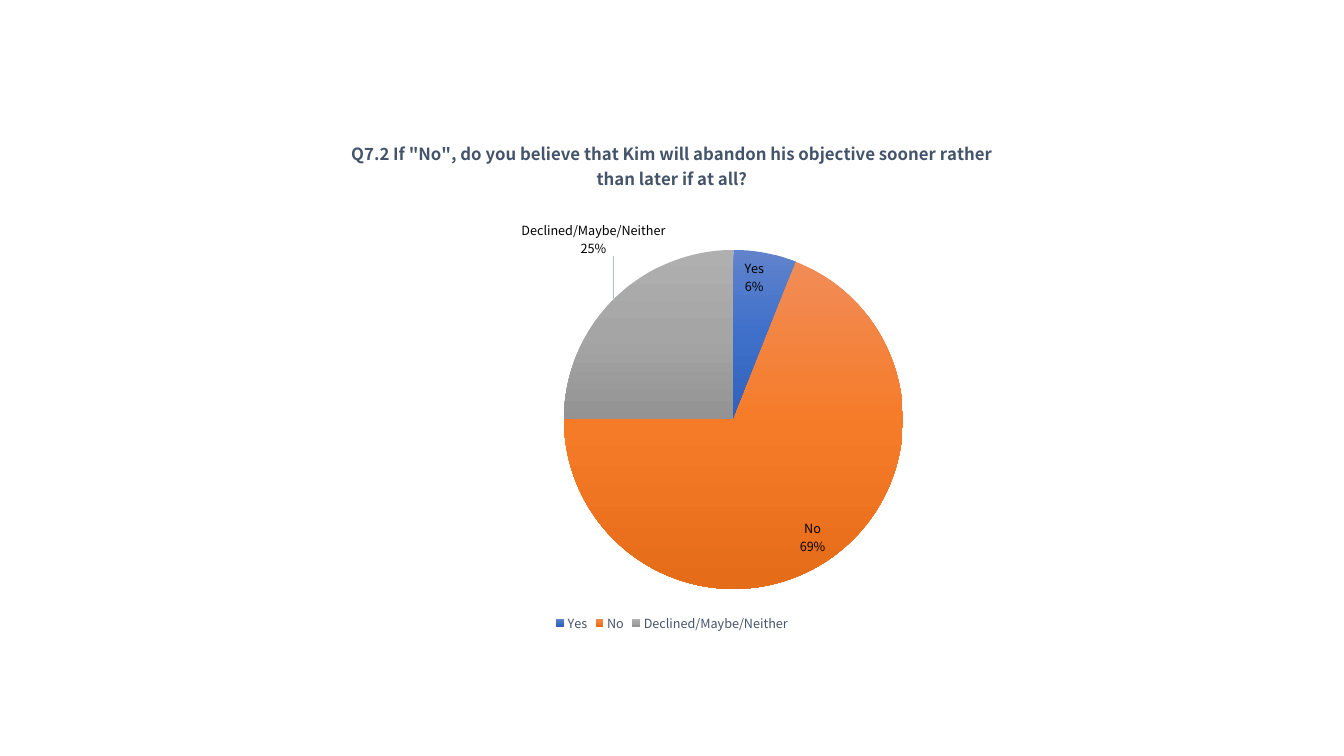
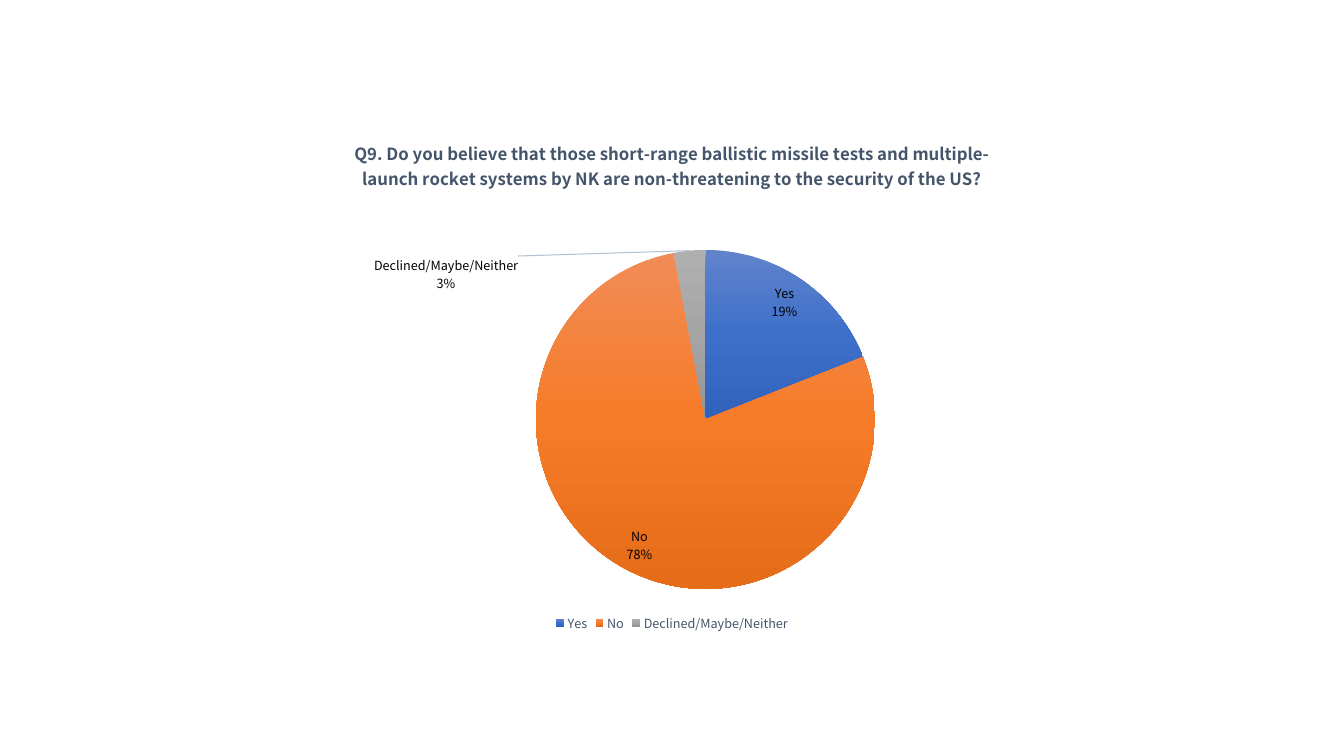
from pptx import Presentation
from pptx.chart.data import CategoryChartData
from pptx.dml.color import RGBColor
from pptx.enum.chart import XL_CHART_TYPE as ChartType
from pptx.enum.chart import XL_LABEL_POSITION as LabelPosition
from pptx.enum.chart import XL_LEGEND_POSITION as LegendPosition
from pptx.oxml import parse_xml
from pptx.oxml.ns import nsdecls, qn
from pptx.util import Pt
from copy import deepcopy

EMU_PER_PX = 914400 / 100.8
FONT = "Noto Sans CJK KR"
SLATE, BLACK, LEADER = "44546A", "000000", "B3C1D0"
ANSWERS = ["Yes", "No", "Declined/Maybe/Neither"]
GRADIENTS = [
    ("6183CB", "3E70CA", "3062BB"),
    ("F18C57", "F67B28", "E56C19"),
    ("AFAFAF", "A5A5A5", "939393"),
]
CHART_LEFT, CHART_TOP, CHART_WIDTH, CHART_HEIGHT = 255, 120, 834, 516
PIE_TOP, PIE_SIZE = 250, 339

# question, shares in percent, left edge of the pie, shift of the last label
SURVEY = [
    ('Q7.2 If "No", do you believe that Kim will abandon his objective '
     "sooner rather than later if at all?", (6, 69, 25), 564, (56, -39)),
    ("Q9. Do you believe that those short-range ballistic missile tests and "
     "multiple-launch rocket systems by NK are non-threatening to the security "
     "of the US?", (19, 78, 3), 536, (-171, 47)),
]


def px(length):
    return round(length * EMU_PER_PX)


def rgb(color):
    return RGBColor.from_string(color)


def style_font(font, size, color, bold=False):
    font.name, font.size, font.bold = FONT, Pt(size), bold
    font.color.rgb = rgb(color)


def manual_layout(x, y, size=None):
    """Layout in chart fractions; with a size it places the inner plot area."""
    parts = [("x", x / CHART_WIDTH), ("y", y / CHART_HEIGHT)]
    modes = ""
    if size:
        modes = ('<c:layoutTarget val="inner"/><c:xMode val="edge"/>'
                 '<c:yMode val="edge"/>')
        parts += [("w", size / CHART_WIDTH), ("h", size / CHART_HEIGHT)]
    values = "".join(f'<c:{tag} val="{part:.4f}"/>' for tag, part in parts)
    return parse_xml(f'<c:layout {nsdecls("c")}><c:manualLayout>{modes}{values}'
                     "</c:manualLayout></c:layout>")


def place_pie(chart, left):
    plot_area = chart._chartSpace.chart.plotArea
    for layout in plot_area.findall(qn("c:layout")):
        plot_area.remove(layout)
    plot_area.insert(0, manual_layout(left - CHART_LEFT, PIE_TOP - CHART_TOP, PIE_SIZE))


def fill_slice(pie_slice, colors):
    fill = pie_slice.format.fill
    fill.gradient()
    fill.gradient_angle = 270
    first = fill.gradient_stops[0]._gs
    first.addnext(deepcopy(first))
    for stop, color, position in zip(fill.gradient_stops, colors, (0, 0.5, 1)):
        stop.color.rgb = rgb(color)
        stop.position = position


def break_after_name(labels):
    """Put the percentage on a line below the answer."""
    separator = parse_xml(f'<c:separator {nsdecls("c")}>\n</c:separator>')
    labels.find(qn("c:showBubbleSize")).addnext(separator)


def label_slices(series):
    labels = series.data_labels
    style_font(labels.font, 9, BLACK)
    labels.number_format, labels.number_format_is_linked = "0%", False
    labels.position = LabelPosition.INSIDE_END
    labels.show_value = False
    labels.show_category_name = labels.show_percentage = True
    break_after_name(labels._element)
    labels._element.append(parse_xml(
        f'<c:leaderLines {nsdecls("c", "a")}><c:spPr><a:ln w="9525"><a:solidFill>'
        f'<a:srgbClr val="{LEADER}"/></a:solidFill></a:ln></c:spPr></c:leaderLines>'))


def shift_label(pie_slice, shift):
    """Move a label away from its slice, with a leader line."""
    label = pie_slice.data_label
    style_font(label.font, 9, BLACK)
    label.position = LabelPosition.OUTSIDE_END
    element = label._get_or_add_dLbl()
    element.find(qn("c:idx")).addnext(manual_layout(*shift))
    for tag, shown in (("showVal", "0"), ("showCatName", "1"), ("showPercent", "1")):
        element.find(qn(f"c:{tag}")).set("val", shown)
    break_after_name(element)


def add_survey_pie(slide, question, shares, pie_left, shift):
    data = CategoryChartData()
    data.categories = ANSWERS
    data.add_series(question, shares)
    frame = (CHART_LEFT, CHART_TOP, CHART_WIDTH, CHART_HEIGHT)
    chart = slide.shapes.add_chart(ChartType.PIE, *map(px, frame), data).chart
    style_font(chart.font, 10, BLACK)

    title = chart.chart_title
    title.include_in_layout = False
    heading = title.text_frame.paragraphs[0]
    heading.text = question
    style_font(heading.font, 12, SLATE, bold=True)

    chart.has_legend = True
    chart.legend.position = LegendPosition.BOTTOM
    chart.legend.include_in_layout = False
    style_font(chart.legend.font, 9, SLATE)

    place_pie(chart, pie_left)
    plot = chart.plots[0]
    plot.vary_by_categories = True
    series = plot.series[0]
    for index, colors in enumerate(GRADIENTS):
        fill_slice(series.points[index], colors)
    label_slices(series)
    shift_label(series.points[len(ANSWERS) - 1], shift)


def main():
    deck = Presentation()
    deck.slide_width, deck.slide_height = px(1344), px(756)
    for entry in SURVEY:
        add_survey_pie(deck.slides.add_slide(deck.slide_layouts[6]), *entry)
    deck.save("out.pptx")


if __name__ == "__main__":
    main()
